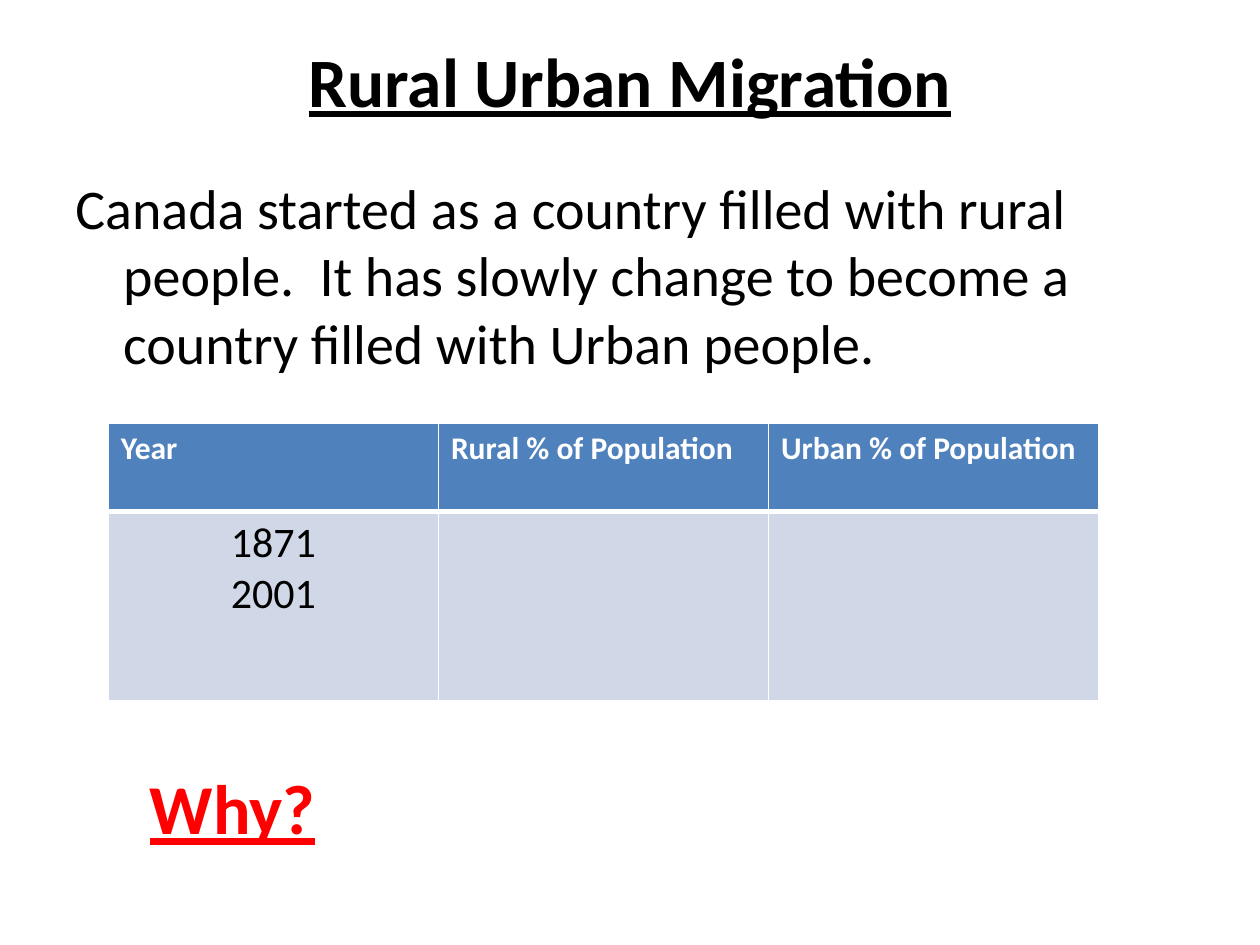
from dataclasses import dataclass

from lxml import etree
from pptx import Presentation
from pptx import util as u
from pptx.dml.color import RGBColor
from pptx.enum import text
from pptx.oxml import ns


@dataclass(frozen=True)
class Theme:
    font: str = "Calibri"
    black: str = "000000"
    white: str = "FFFFFF"
    red: str = "FF0000"
    header_fill: str = "4F81BD"
    body_fill: str = "D0D8E8"
    title_size: float = 39.6
    body_size: float = 32
    header_size: float = 18
    year_size: float = 24
    question_size: float = 40
    thin_line: float = 1
    thick_line: float = 3


THEME = Theme()


def write_paragraph(paragraph, wording, size, color, align=text.PP_ALIGN.LEFT, **extra):
    paragraph.alignment = align
    run = paragraph.add_run()
    run.text = wording
    formats = {"name": THEME.font, "size": u.Pt(size), "bold": False, **extra}
    for name, value in formats.items():
        setattr(run.font, name, value)
    run.font.color.rgb = RGBColor.from_string(color)


def add_text(slide, box, wording, size, color, frame_formats=None, **formats):
    shape = slide.shapes.add_textbox(*map(u.Inches, box))
    frame = shape.text_frame
    for name, value in {"word_wrap": True, **(frame_formats or {})}.items():
        setattr(frame, name, value)
    write_paragraph(frame.paragraphs[0], wording, size, color, **formats)
    return shape


def set_hanging_indent(paragraph, length):
    properties = paragraph._p.get_or_add_pPr()
    properties.set("marL", str(length))
    properties.set("indent", str(-length))


def set_borders(cell, widths):
    properties = cell._tc.get_or_add_tcPr()
    for side, width in widths.items():
        line = etree.SubElement(properties, ns.qn(f"a:ln{side}"), w=str(u.Pt(width)))
        fill = etree.SubElement(line, ns.qn("a:solidFill"))
        etree.SubElement(fill, ns.qn("a:srgbClr"), val=THEME.white)


def fill_cell(cell, lines, fill, borders, **formats):
    set_borders(cell, borders)
    cell.fill.solid()
    cell.fill.fore_color.rgb = RGBColor.from_string(fill)
    frame = cell.text_frame
    for index, wording in enumerate(lines):
        paragraph = frame.add_paragraph() if index else frame.paragraphs[0]
        write_paragraph(paragraph, wording, **formats)


def add_population_table(slide):
    box = (0.86, 3.36, 7.86, 2.2)
    table = slide.shapes.add_table(2, 3, *map(u.Inches, box)).table
    for column in table.columns:
        column.width = u.Inches(2.62)
    for row, height in zip(table.rows, (0.7, 1.5)):
        row.height = u.Inches(height)

    thin, thick = THEME.thin_line, THEME.thick_line
    headings = ("Year", "Rural % of Population", "Urban % of Population")
    year_lines = (["1871", "2001"], [], [])
    for column, (heading, lines) in enumerate(zip(headings, year_lines)):
        fill_cell(table.cell(0, column), [heading], THEME.header_fill,
                  {"L": thin, "R": thin, "T": thin, "B": thick},
                  size=THEME.header_size, color=THEME.white, bold=True)
        fill_cell(table.cell(1, column), lines, THEME.body_fill,
                  {"L": thin, "R": thin, "T": thick, "B": thin},
                  size=THEME.year_size, color=THEME.black, align=text.PP_ALIGN.CENTER)


def main():
    presentation = Presentation()
    presentation.slide_width = u.Inches(10)
    presentation.slide_height = u.Inches(7.5)
    slide = presentation.slides.add_slide(presentation.slide_layouts[6])

    # Title
    add_text(slide, (0.5, 0.3, 9, 1.25), "Rural Urban Migration",
             THEME.title_size, THEME.black, {"margin_top": 0},
             align=text.PP_ALIGN.CENTER, bold=True, underline=True)

    # Introduction with a hanging indent
    introduction = add_text(
        slide, (0.5, 1.33, 9, 2.11),
        "Canada started as a country filled with rural people.  It has slowly "
        "change to become a country filled with Urban people.",
        THEME.body_size, THEME.black)
    set_hanging_indent(introduction.text_frame.paragraphs[0], u.Inches(0.38))

    # Population shares by year
    add_population_table(slide)

    # Closing question
    add_text(slide, (1.09, 6.02, 1.53, 0.77), "Why?",
             THEME.question_size, THEME.red,
             {"word_wrap": False, "auto_size": text.MSO_AUTO_SIZE.SHAPE_TO_FIT_TEXT},
             bold=True, underline=True)

    presentation.save("out.pptx")


if __name__ == "__main__":
    main()
